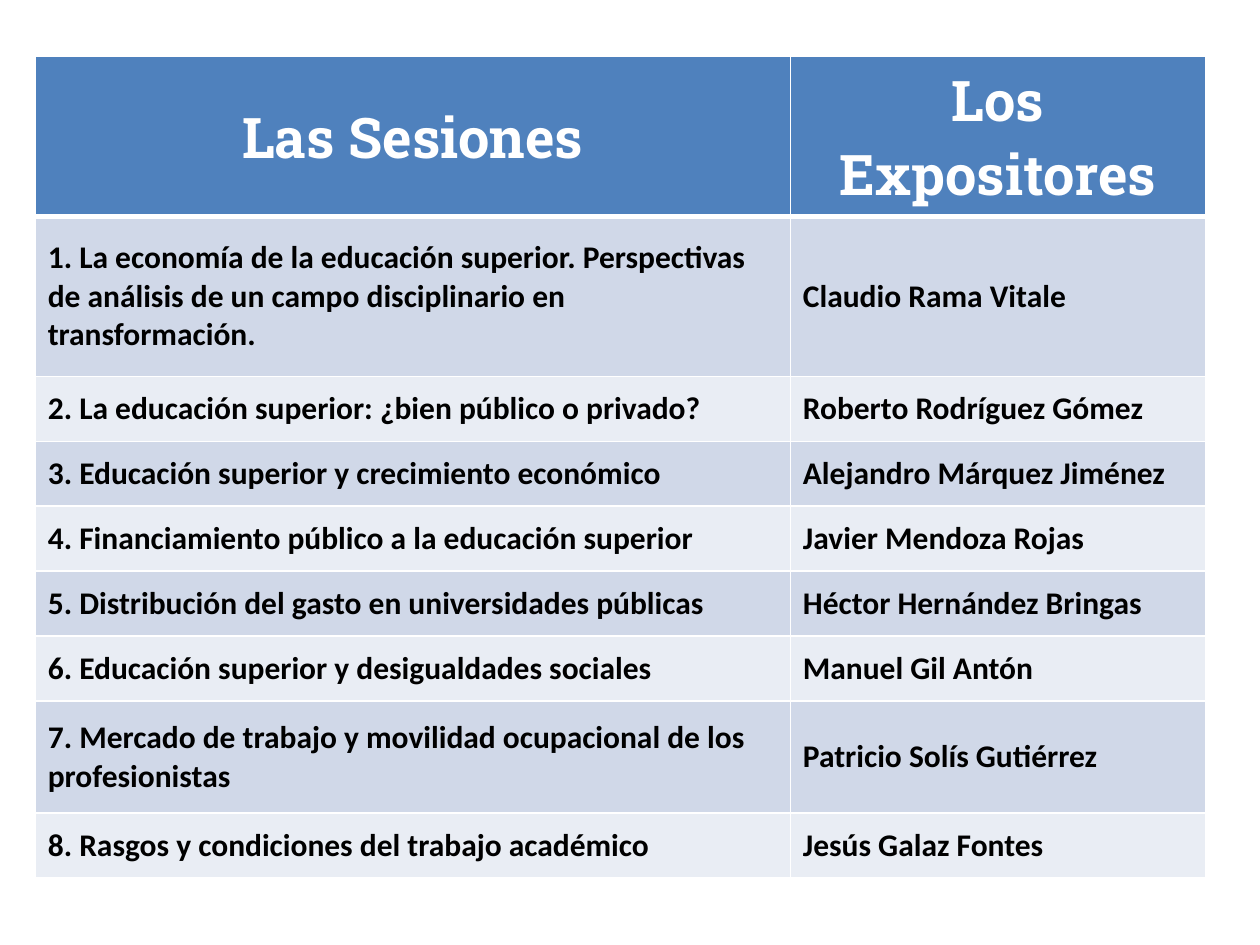
from lxml import etree
from pptx import Presentation
from pptx import util as u
from pptx.dml import color
from pptx.enum import text
from pptx.oxml import ns

COLORS = {
    "header": "4F81BD",
    "band_dark": "D0D8E8",
    "band_light": "E9EDF4",
    "border": "FFFFFF",
    "header_text": "FFFFFF",
    "body_text": "000000",
}
HEADINGS = ("Las Sesiones", "Los Expositores")
SESSIONS = [
    ("La economía de la educación superior. Perspectivas de análisis de un "
     "campo disciplinario en transformación.", "Claudio Rama Vitale"),
    ("La educación superior: ¿bien público o privado?", "Roberto Rodríguez Gómez"),
    ("Educación superior y crecimiento económico", "Alejandro Márquez Jiménez"),
    ("Financiamiento público a la educación superior", "Javier Mendoza Rojas"),
    ("Distribución del gasto en universidades públicas", "Héctor Hernández Bringas"),
    ("Educación superior y desigualdades sociales", "Manuel Gil Antón"),
    ("Mercado de trabajo y movilidad ocupacional de los profesionistas",
     "Patricio Solís Gutiérrez"),
    ("Rasgos y condiciones del trabajo académico", "Jesús Galaz Fontes"),
]
HEADER_HEIGHT = 2.06
ROW_HEIGHT = 1.31
TALL_ROWS = {1: 3.22, 7: 2.25}
SESSION_SHARE = 0.645


def rgb(name):
    """Return the named palette colour."""
    return color.RGBColor.from_string(COLORS[name])


def set_borders(cell, bottom=1):
    """Draw the four cell borders, with a given bottom width in points."""
    tcPr = cell._tc.get_or_add_tcPr()
    for side, width in (("L", 1), ("R", 1), ("T", 1), ("B", bottom)):
        ln = etree.SubElement(tcPr, ns.qn(f"a:ln{side}"), w=str(u.Pt(width)))
        fill = etree.SubElement(ln, ns.qn("a:solidFill"))
        etree.SubElement(fill, ns.qn("a:srgbClr"), val=COLORS["border"])


def fill_cell(cell, content, fill, font, size, ink, align, bottom=1):
    """Write one cell and set its look."""
    set_borders(cell, bottom)
    cell.fill.solid()
    cell.fill.fore_color.rgb = rgb(fill)
    cell.vertical_anchor = text.MSO_ANCHOR.MIDDLE
    p = cell.text_frame.paragraphs[0]
    p.text = content
    p.alignment = align
    r = p.runs[0]
    r.font.name = font
    r.font.size = u.Pt(size)
    r.font.bold = True
    r.font.color.rgb = rgb(ink)


def add_sessions_table(s, left, top, width):
    """Place the table of sessions and speakers in the given box."""
    heights = [HEADER_HEIGHT] + [
        TALL_ROWS.get(n, ROW_HEIGHT) for n in range(1, len(SESSIONS) + 1)]
    table = s.shapes.add_table(
        len(heights), len(HEADINGS), u.Cm(left), u.Cm(top),
        u.Cm(width), u.Cm(sum(heights))).table
    for col, share in zip(table.columns, (SESSION_SHARE, 1 - SESSION_SHARE)):
        col.width = u.Cm(width * share)
    for row, height in zip(table.rows, heights):
        row.height = u.Cm(height)
    for c, heading in enumerate(HEADINGS):
        fill_cell(table.cell(0, c), heading, "header", "Roboto Slab", 32,
                  "header_text", text.PP_ALIGN.CENTER, bottom=3)
    for n, (title, speaker) in enumerate(SESSIONS, 1):
        band = "band_dark" if n % 2 else "band_light"
        for c, content in enumerate((f"{n}. {title}", speaker)):
            fill_cell(table.cell(n, c), content, band, "Calibri", 18,
                      "body_text", text.PP_ALIGN.LEFT)


def main():
    """Build and save the presentation."""
    prs = Presentation()
    prs.slide_width, prs.slide_height = u.Cm(25.4), u.Cm(19.05)
    s = prs.slides.add_slide(prs.slide_layouts[6])
    add_sessions_table(s, 0.71, 1.13, 23.6)
    prs.save("out.pptx")


if __name__ == "__main__":
    main()
